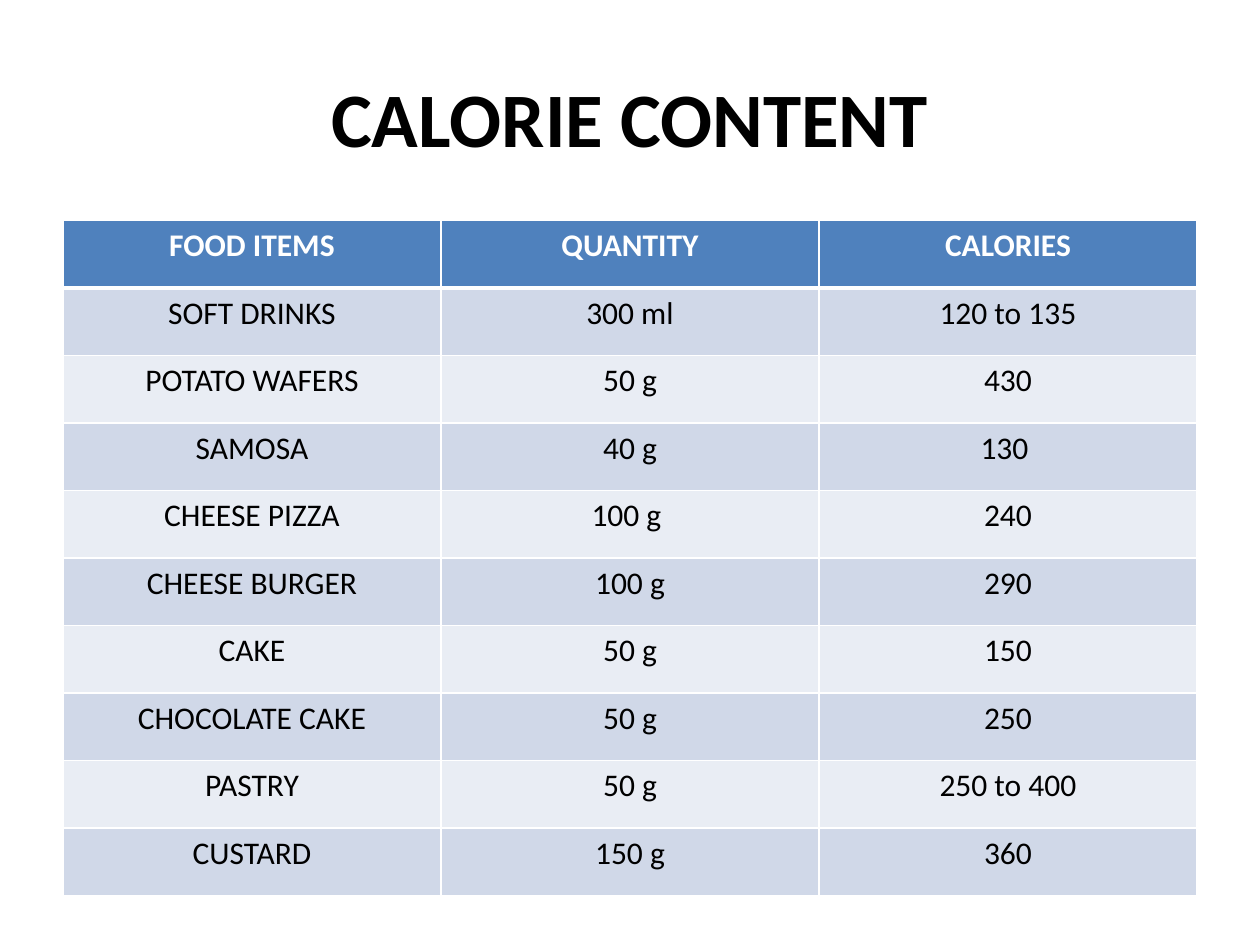
from lxml import etree
from pptx import Presentation
from pptx.dml.color import RGBColor
from pptx.enum import text
from pptx.oxml import ns
from pptx.util import Inches, Pt

BLACK = RGBColor(0, 0, 0)
WHITE = RGBColor(255, 255, 255)
BLUE = RGBColor(0x4F, 0x81, 0xBD)
BANDS = (RGBColor(0xE9, 0xED, 0xF4), RGBColor(0xD0, 0xD8, 0xE8))

FOODS = [
    ("FOOD ITEMS", "QUANTITY", "CALORIES"),
    ("SOFT DRINKS", "300 ml", "120 to 135"),
    ("POTATO WAFERS", "50 g", "430"),
    ("SAMOSA", "40 g", "130 "),
    ("CHEESE PIZZA", "100 g ", "240"),
    ("CHEESE BURGER", "100 g", "290"),
    ("CAKE", "50 g", "150"),
    ("CHOCOLATE CAKE", "50 g", "250"),
    ("PASTRY", "50 g", "250 to 400"),
    ("CUSTARD", "150 g", "360"),
]


def write(frame, words, size, color, bold):
    para = frame.paragraphs[0]
    para.text = words
    para.alignment = text.PP_ALIGN.CENTER
    font = para.font
    font.name, font.size, font.bold = "Calibri", Pt(size), bold
    font.color.rgb = color


def add_title(slide, words):
    box = slide.shapes.add_textbox(Inches(0.5), Inches(0.3), Inches(9), Inches(1.25))
    frame = box.text_frame
    frame.word_wrap = True
    frame.vertical_anchor = text.MSO_ANCHOR.MIDDLE
    write(frame, words, 44, BLACK, True)


def add_edge(cell, side, width):
    props = cell._tc.get_or_add_tcPr()
    line = etree.SubElement(props, ns.qn(f"a:ln{side}"), w=str(Pt(width)))
    fill = etree.SubElement(line, ns.qn("a:solidFill"))
    etree.SubElement(fill, ns.qn("a:srgbClr"), val=str(WHITE))


def add_grid(slide, rows):
    table = slide.shapes.add_table(
        len(rows), len(rows[0]), Inches(0.5), Inches(1.75), Inches(9), Inches(5.36)
    ).table
    for r, row in enumerate(rows):
        head = r == 0
        # The rule between header and body is thicker
        edges = {"L": 1, "R": 1, "T": 3 if r == 1 else 1, "B": 3 if head else 1}
        for c, words in enumerate(row):
            cell = table.cell(r, c)
            for side, width in edges.items():
                add_edge(cell, side, width)
            cell.fill.solid()
            cell.fill.fore_color.rgb = BLUE if head else BANDS[r % 2]
            write(cell.text_frame, words, 18, WHITE if head else BLACK, head)


def main():
    deck = Presentation()
    deck.slide_width, deck.slide_height = Inches(10), Inches(7.5)
    slide = deck.slides.add_slide(deck.slide_layouts[6])

    # Heading
    add_title(slide, "CALORIE CONTENT")

    # Calorie table
    add_grid(slide, FOODS)

    deck.save("out.pptx")


if __name__ == "__main__":
    main()
